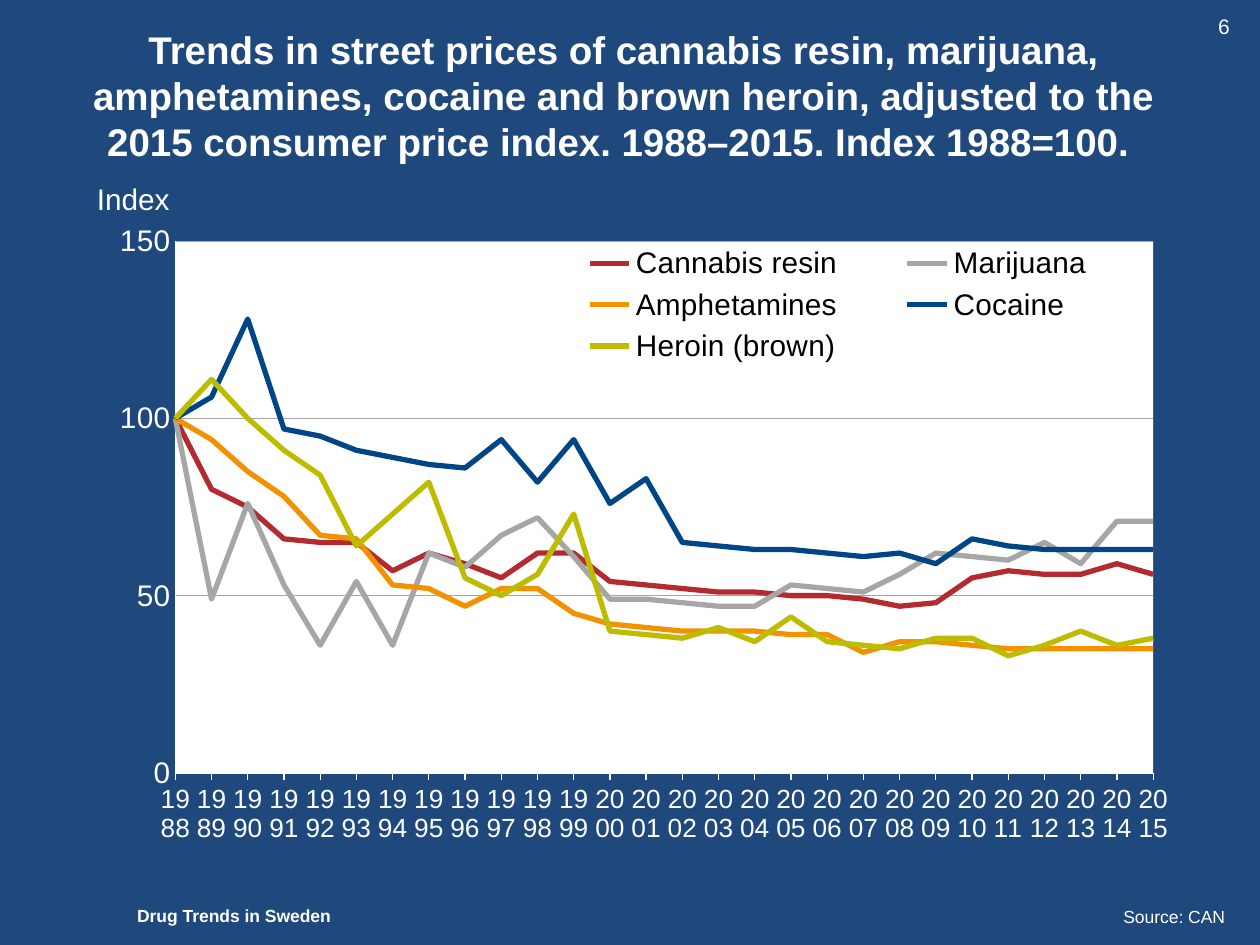
from lxml import etree
from pptx import Presentation
from pptx.chart.data import CategoryChartData
from pptx.dml.color import RGBColor
from pptx.enum import chart as ch, text as tx
from pptx.oxml import parse_xml
from pptx.oxml.ns import nsdecls, qn
from pptx.util import Inches, Pt

NAVY = RGBColor(0x1F, 0x49, 0x7D)
WHITE = RGBColor(0xFF, 0xFF, 0xFF)
BLACK = RGBColor(0, 0, 0)
RED = RGBColor(0xB3, 0x2B, 0x31)
GREY = RGBColor(0xA6, 0xA6, 0xA6)
ORANGE = RGBColor(0xF2, 0x92, 0x00)
BLUE = RGBColor(0x00, 0x46, 0x87)
LIME = RGBColor(0xBE, 0xBC, 0x00)

prs = Presentation()
prs.slide_width, prs.slide_height = Inches(10), Inches(7.5)
slide = prs.slides.add_slide(prs.slide_layouts[6])
slide.background.fill.solid()
slide.background.fill.fore_color.rgb = NAVY


def add_text(words, x, y, w, h, size, bold=False, align=tx.PP_ALIGN.LEFT,
             anchor=tx.MSO_ANCHOR.TOP, wrap=True):
    frame = slide.shapes.add_textbox(Inches(x), Inches(y), Inches(w), Inches(h)).text_frame
    frame.word_wrap = wrap
    frame.vertical_anchor = anchor
    para = frame.paragraphs[0]
    para.alignment = align
    run = para.add_run()
    run.text = words
    run.font.name, run.font.size, run.font.bold = "Arial", Pt(size), bold
    run.font.color.rgb = WHITE


def layout(x, y, w, h, inner=False):
    """Manual layout in fractions of the chart's size."""
    node = etree.Element(qn("c:layout"))
    box = etree.SubElement(node, qn("c:manualLayout"))
    parts = [("layoutTarget", "inner")] if inner else []
    parts += [("xMode", "edge"), ("yMode", "edge"), ("x", x), ("y", y), ("w", w), ("h", h)]
    for tag, val in parts:
        etree.SubElement(box, qn("c:" + tag)).set("val", str(val))
    return node


add_text("Drug Trends in Sweden", 0.99, 7.13, 1.77, 0.27, 10, bold=True, wrap=False)
add_text("Trends in street prices of cannabis resin, marijuana, amphetamines, cocaine "
         "and brown heroin, adjusted to the 2015 consumer price index. 1988–2015. "
         "Index 1988=100. ", 0.45, 0.2, 9, 1.11, 22, bold=True,
         align=tx.PP_ALIGN.CENTER, anchor=tx.MSO_ANCHOR.MIDDLE)

# Street prices, one value a year
prices = [
    ("Cannabis resin", RED, [100, 80, 75, 66, 65, 65, 57, 62, 59, 55, 62, 62, 54, 53,
                             52, 51, 51, 50, 50, 49, 47, 48, 55, 57, 56, 56, 59, 56]),
    ("Marijuana", GREY, [100, 49, 76, 53, 36, 54, 36, 62, 58, 67, 72, 61, 49, 49,
                         48, 47, 47, 53, 52, 51, 56, 62, 61, 60, 65, 59, 71, 71]),
    ("Amphetamines", ORANGE, [100, 94, 85, 78, 67, 66, 53, 52, 47, 52, 52, 45, 42, 41,
                              40, 40, 40, 39, 39, 34, 37, 37, 36, 35, 35, 35, 35, 35]),
    ("Cocaine", BLUE, [100, 106, 128, 97, 95, 91, 89, 87, 86, 94, 82, 94, 76, 83,
                       65, 64, 63, 63, 62, 61, 62, 59, 66, 64, 63, 63, 63, 63]),
    ("Heroin (brown)", LIME, [100, 111, 100, 91, 84, 64, 73, 82, 55, 50, 56, 73, 40, 39,
                              38, 41, 37, 44, 37, 36, 35, 38, 38, 33, 36, 40, 36, 38]),
]
data = CategoryChartData(number_format="0")
data.categories = [str(year) for year in range(1988, 2016)]
for name, color, vals in prices:
    data.add_series(name, vals)
chart = slide.shapes.add_chart(ch.XL_CHART_TYPE.LINE, Inches(0.7), Inches(1.75),
                               Inches(8.75), Inches(4.95), data).chart
chart.has_title = False
chart.plots[0].vary_by_categories = False
for series, (name, color, vals) in zip(chart.series, prices):
    series.smooth = False
    series.marker.style = ch.XL_MARKER_STYLE.NONE
    series.format.line.color.rgb = color
    series.format.line.width = Pt(3)

years, index = chart.category_axis, chart.value_axis
for axis, width in [(years, 0.75), (index, 0.25)]:
    axis.format.line.color.rgb = WHITE
    axis.format.line.width = Pt(width)
    axis.minor_tick_mark = ch.XL_TICK_MARK.NONE

chart.has_legend = True
legend = chart.legend
legend.position = ch.XL_LEGEND_POSITION.TOP
legend.include_in_layout = True
for font, size, color in [(chart.font, 17, WHITE), (years.tick_labels.font, 15, WHITE),
                          (index.tick_labels.font, 17, WHITE), (legend.font, 17, BLACK)]:
    font.name, font.size, font.bold = "Arial", Pt(size), False
    font.color.rgb = color

years.major_tick_mark = ch.XL_TICK_MARK.OUTSIDE
years._element.find(qn("c:txPr")).find(qn("a:bodyPr")).set("rot", "0")
skip = parse_xml(f'<c:tickLblSkip {nsdecls("c")} val="1"/>')
years._element.find(qn("c:noMultiLvlLbl")).addprevious(skip)

index.major_tick_mark = ch.XL_TICK_MARK.NONE
index.minimum_scale, index.maximum_scale, index.major_unit = 0, 150, 50
index.tick_labels.number_format = "0"
index.tick_labels.number_format_is_linked = False
index.major_gridlines.format.line.color.rgb = GREY
index.major_gridlines.format.line.width = Pt(0.25)
# Lines start on the axis itself
for old in index._element.findall(qn("c:crossBetween")):
    index._element.remove(old)
cross = parse_xml(f'<c:crossBetween {nsdecls("c")} val="midCat"/>')
index._element.find(qn("c:majorUnit")).addprevious(cross)

area = chart._chartSpace.chart.plotArea
for part in (area, legend._element):
    for old in part.findall(qn("c:layout")):
        part.remove(old)
area.insert(0, layout(0.079, 0.033, 0.887, 0.853, inner=True))
area.append(parse_xml(f'<c:spPr {nsdecls("c", "a")}><a:solidFill>'
                      f'<a:srgbClr val="{WHITE}"/></a:solidFill></c:spPr>'))
legend._element.find(qn("c:legendPos")).addnext(layout(0.4, 0.03, 0.56, 0.21))

add_text("Index", 0.67, 1.38, 0.79, 0.39, 17, anchor=tx.MSO_ANCHOR.MIDDLE, wrap=False)
add_text("Source: CAN", 7.03, 7.14, 2.79, 0.27, 10, align=tx.PP_ALIGN.RIGHT)
add_text("6", 9.57, 0.06, 0.43, 0.3, 12)

prs.save("out.pptx")
